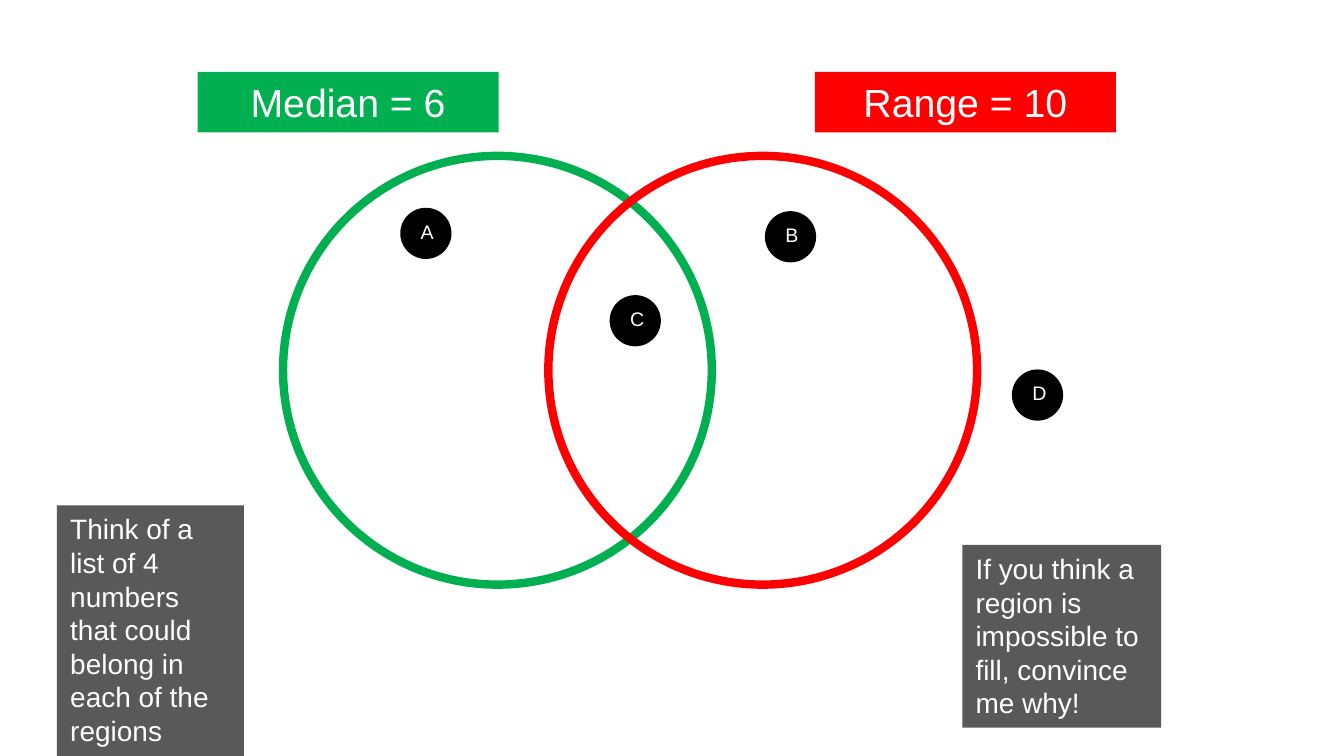
from pptx import Presentation
from pptx import util as u
from pptx.dml.color import RGBColor
from pptx.enum import shapes, text

COLORS = {"median": "00B050", "range": "FF0000", "marker": "000000",
          "note": "595959", "label": "FFFFFF"}
CENTER, LEFT = text.PP_ALIGN.CENTER, text.PP_ALIGN.LEFT
OVAL = shapes.MSO_SHAPE.OVAL

# Widescreen slide, 16:9
presentation = Presentation()
presentation.slide_width = u.Inches(10)
presentation.slide_height = presentation.slide_width * 9 // 16
slide = presentation.slides.add_slide(presentation.slide_layouts[6])

# Grid of 100 columns; rows are as tall as columns are wide
UNIT = presentation.slide_width / 100


def add_oval(column, row, size, line, width, fill=None):
    box = [round(n * UNIT) for n in (column, row, size, size)]
    shape = slide.shapes.add_shape(OVAL, *box)
    shape.shadow.inherit = False
    if fill:
        shape.fill.solid()
        shape.fill.fore_color.rgb = RGBColor.from_string(COLORS[fill])
    else:
        shape.fill.background()
    shape.line.color.rgb = RGBColor.from_string(COLORS[line])
    shape.line.width = u.Pt(width)


def add_text(words, column, row, width, height, size, alignment, fill=None):
    box = [round(n * UNIT) for n in (column, row, width, height)]
    shape = slide.shapes.add_textbox(*box)
    if fill:
        shape.fill.solid()
        shape.fill.fore_color.rgb = RGBColor.from_string(COLORS[fill])
    frame = shape.text_frame
    frame.word_wrap = True
    frame.auto_size = text.MSO_AUTO_SIZE.SHAPE_TO_FIT_TEXT
    paragraph = frame.paragraphs[0]
    paragraph.alignment = alignment
    run = paragraph.add_run()
    run.text = words
    run.font.name = "Arial"
    run.font.size = u.Pt(size)
    run.font.color.rgb = RGBColor.from_string(COLORS["label"])


# Set headings
for words, column, color in [("Range = 10", 60.63, "range"),
                             ("Median = 6", 14.7, "median")]:
    add_text(words, column, 5.35, 22.4, 4.5, 21, CENTER, color)

# Venn circles
for column, color in [(21.06, "median"), (40.8, "range")]:
    add_oval(column, 11.6, 31.9, color, 4.5)

# Region markers, each with its letter
for letter, column, row in [("A", 29.92, 15.6), ("B", 57.05, 15.85),
                            ("C", 45.5, 22.1), ("D", 75.43, 27.63)]:
    add_oval(column, row, 3.53, "marker", 2, fill="marker")
    add_text(letter, column + 0.4, row + 0.25, 2.7, 2.8, 10.5, CENTER)

# Task notes
for words, *box in [
    ("Think of a list of 4 numbers that could belong in each of the regions",
     4.24, 37.6, 13.9, 18.7),
    ("If you think a region is impossible to fill, convince me why!",
     71.6, 40.55, 14.8, 13.6),
]:
    add_text(words, *box, 15, LEFT, "note")

presentation.save("out.pptx")
